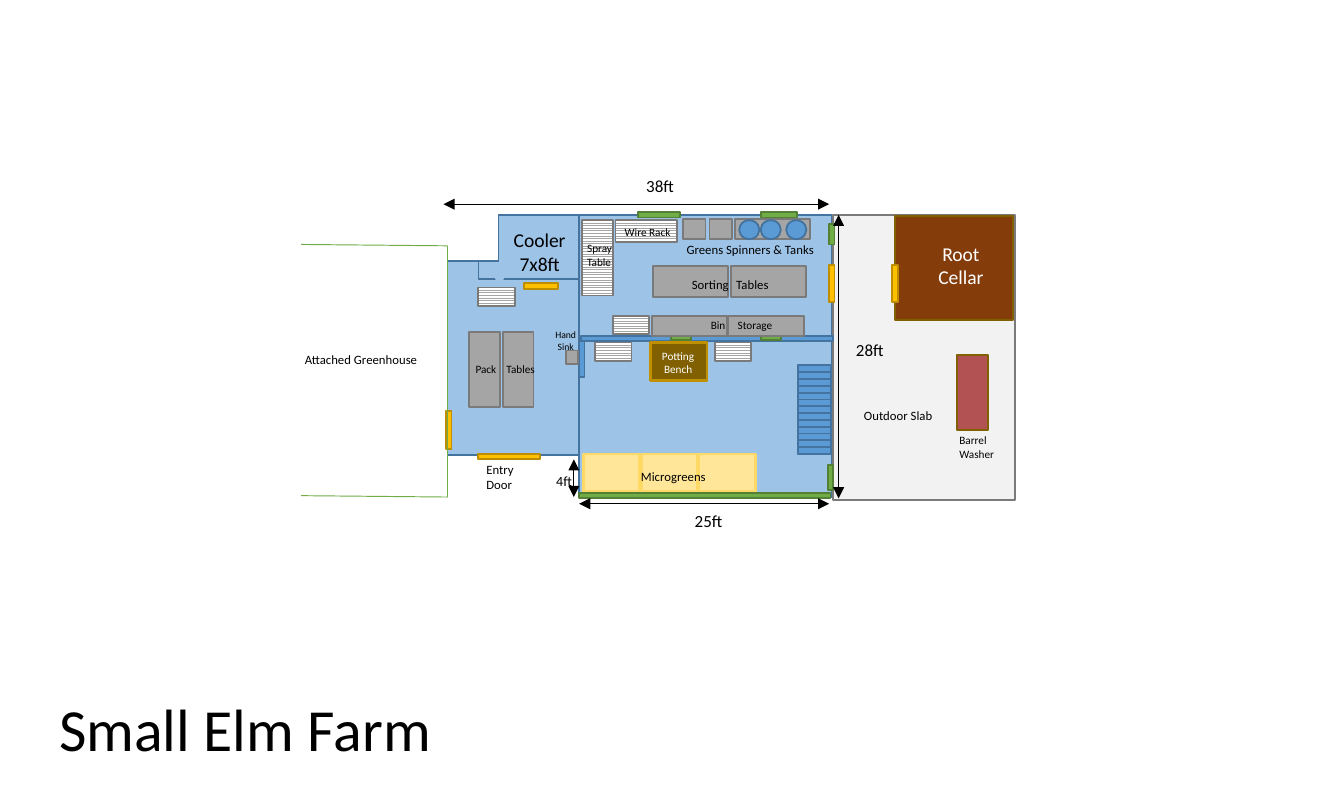
import pptx
import pptx.dml.color
import pptx.enum.dml
import pptx.enum.shapes
import pptx.enum.text
import pptx.oxml
import pptx.util

RGB = pptx.dml.color.RGBColor
BLACK, WHITE = RGB(0, 0, 0), RGB(255, 255, 255)
FLOOR, BLUE, NAVY = RGB(0x9D, 0xC3, 0xE6), RGB(0x5B, 0x9B, 0xD5), RGB(0x43, 0x73, 0x9E)
GREEN, PINE = RGB(0x70, 0xAD, 0x47), RGB(0x53, 0x80, 0x35)
AMBER, OCHRE = RGB(0xFF, 0xC0, 0x00), RGB(0xBD, 0x8E, 0x00)
PALE, GREY, SLATE = RGB(0xF2, 0xF2, 0xF2), RGB(0xA5, 0xA5, 0xA5), RGB(0x7A, 0x7A, 0x7A)
CREAM, STRAW = RGB(0xFF, 0xE6, 0x99), RGB(0xFF, 0xD9, 0x66)
RUST, RED = RGB(0x84, 0x3C, 0x0B), RGB(0xB2, 0x52, 0x52)
OLIVE, GOLD = RGB(0x80, 0x60, 0x00), RGB(0xBF, 0x90, 0x00)

# The page is a grid of 1000 columns by 600 rows
COLUMNS, ROWS = 1000, 600
CELL = pptx.util.Inches(0.01)
FONT = "Calibri"
TITLE = ("Small Elm Farm", (34, 510, 298, 64), 32)

# Look of each part: fill, line, line width
STYLES = {
    "floor": (FLOOR, NAVY, 1),
    "slab": (PALE, SLATE, 1),
    "wall": (BLUE, NAVY, 1),
    "opening": (FLOOR, FLOOR, 1),
    "window": (GREEN, PINE, 1),
    "door": (AMBER, OCHRE, 1),
    "table": (GREY, SLATE, 1),
    "rack": (None, SLATE, 1),
    "tray": (CREAM, STRAW, 1.5),
    "cellar": (RUST, OLIVE, 1),
    "washer": (RED, OLIVE, 1),
    "bench": (OLIVE, GOLD, 1.5),
    "tank": (BLUE, NAVY, 1),
}

# Parts from back to front: left, top, width, height
PARTS = [
    ("floor", [(431, 160, 188, 210), (333, 194, 98, 145), (371, 160, 60, 48), (356, 194, 15, 14)]),
    ("slab", [(620, 160, 135, 212)]),
    ("wall", [(432, 250, 188, 4), (431, 254, 4, 27)]),
    ("window", [(475, 158, 31, 4), (566, 158, 27, 4), (617, 167, 4, 15),
                (616, 346, 4, 19), (566, 249, 15, 4), (499, 249, 15, 4)]),
    ("cellar", [(666, 161, 88, 77)]),
    ("door", [(617, 197, 4, 28), (356, 338, 46, 4), (332, 306, 4, 28),
              (390, 211, 25, 4), (664, 197, 4, 28)]),
    ("table", [(421, 261, 9, 10), (486, 198, 56, 23), (544, 198, 56, 23),
               (508, 163, 17, 15), (528, 163, 17, 15), (547, 163, 56, 15),
               (485, 235, 56, 15), (542, 235, 56, 15),
               (349, 247, 23, 56), (374, 247, 23, 56)]),
    ("tank", [(left, 164, 15, 14) for left in (550, 566, 585)]),
    ("rack", [(433, 164, 23, 56), (458, 164, 46, 16), (532, 255, 27, 14),
              (356, 214, 27, 14), (443, 255, 27, 14), (456, 235, 27, 14)]),
    ("tray", [(434 + 43 * place, 338, 42, 28) for place in range(3)]),
    ("washer", [(712, 264, 23, 56)]),
    ("window", [(431, 367, 187, 4)]),
    ("bench", [(484, 255, 42, 28)]),
    ("opening", [(369, 196, 5, 12)]),
]
STAIRS, STEPS = (594, 272, 24, 66), 13

# Lines: start column and row, end column and row
GREENHOUSE = [(333, 370, 224, 369), (333, 183, 224, 182), (333, 370, 333, 183)]
DIMENSIONS = [(431, 375, 617, 375), (330, 152, 617, 152), (624, 371, 624, 160), (427, 342, 427, 370)]

# Labels: text, box, size, colour, centred, tab stop in columns
LABELS = [
    ("25ft", (507, 375, 41, 25), 9.1, BLACK, False, None),
    ("38ft", (471, 126, 41, 25), 9.1, BLACK, False, None),
    ("28ft", (627, 248, 41, 25), 9.1, BLACK, False, None),
    ("4ft", (404, 347, 32, 23), 7.5, BLACK, False, None),
    ("Sorting\tTables", (505, 201, 90, 21), 6.8, BLACK, False, 33),
    ("Microgreens", (467, 344, 68, 21), 6.8, BLACK, False, None),
    ("Greens Spinners & Tanks", (501, 175, 115, 21), 6.8, BLACK, False, None),
    ("Attached Greenhouse", (217, 257, 104, 21), 6.8, BLACK, False, None),
    ("Spray\nTable", (427, 175, 39, 30), 6, BLACK, False, None),
    ("Bin\tStorage", (519, 232, 78, 20), 6, BLACK, False, 20),
    ("Outdoor Slab", (633, 299, 71, 21), 6.8, BLACK, False, None),
    ("Barrel\nWasher", (704, 318, 47, 30), 6, BLACK, False, None),
    ("Wire Rack", (455, 163, 55, 20), 6, BLACK, False, None),
    ("Entry Door", (352, 339, 61, 21), 6.8, BLACK, False, None),
    ("Cooler\n7x8ft", (372, 165, 59, 45), 10.5, BLACK, True, None),
    ("Pack\tTables", (344, 265, 78, 20), 6, BLACK, False, 23),
    ("Potting\nBench", (482, 255, 45, 30), 6, WHITE, True, None),
    ("Hand\nSink", (403, 240, 36, 28), 5.2, BLACK, True, None),
    ("Root\nCellar", (688, 175, 54, 45), 10.5, WHITE, True, None),
]


def cells(numbers):
    return [round(number * CELL) for number in numbers]


def apply(target, formats):
    for name, value in formats.items():
        setattr(target, name, value)


def add_part(page, style, place):
    fill, line, width = STYLES[style]
    kinds = pptx.enum.shapes.MSO_SHAPE
    kind = kinds.OVAL if style == "tank" else kinds.RECTANGLE
    shape = page.shapes.add_shape(kind, *cells(place))
    shape.shadow.inherit = False
    if fill is None:
        shape.fill.patterned()
        shape.fill.pattern = pptx.enum.dml.MSO_PATTERN.NARROW_HORIZONTAL
        shape.fill.fore_color.rgb = GREY
        shape.fill.back_color.rgb = WHITE
    else:
        shape.fill.solid()
        shape.fill.fore_color.rgb = fill
    shape.line.color.rgb = line
    shape.line.width = pptx.util.Pt(width)


def add_line(page, ends, color, arrows):
    straight = pptx.enum.shapes.MSO_CONNECTOR.STRAIGHT
    line = page.shapes.add_connector(straight, *cells(ends))
    line.line.color.rgb = color
    line.line.width = pptx.util.Pt(0.5)
    properties = line._element.spPr
    pptx.oxml.xmlchemy.OxmlElement  # noqa: B018
    if arrows:
        for tag in ("a:headEnd", "a:tailEnd"):
            end = pptx.oxml.xmlchemy.OxmlElement(tag)
            end.set("type", "triangle")
            line.line._get_or_add_ln().append(end)
    properties.append(pptx.oxml.xmlchemy.OxmlElement("a:effectLst"))


def write(box, text, size, color, centred, tab):
    options = pptx.enum.text
    frame = box.text_frame
    frame.text = text
    apply(frame, {
        "word_wrap": tab is not None,
        "auto_size": options.MSO_AUTO_SIZE.SHAPE_TO_FIT_TEXT,
        "vertical_anchor": options.MSO_ANCHOR.TOP,
    })
    align = options.PP_ALIGN.CENTER if centred else options.PP_ALIGN.LEFT
    for para in frame.paragraphs:
        para.alignment = align
        if tab is not None:
            stops = pptx.oxml.xmlchemy.OxmlElement("a:tabLst")
            stop = pptx.oxml.xmlchemy.OxmlElement("a:tab")
            stop.set("pos", str(tab * CELL))
            stop.set("algn", "l")
            stops.append(stop)
            para._p.get_or_add_pPr().append(stops)
        for span in para.runs:
            apply(span.font, {"name": FONT, "size": pptx.util.Pt(size)})
            span.font.color.rgb = color


def main():
    deck = pptx.Presentation()
    apply(deck, {"slide_width": COLUMNS * CELL, "slide_height": ROWS * CELL})
    page = deck.slides.add_slide(deck.slide_layouts[5])

    # Title
    text, place, size = TITLE
    title = page.shapes.title
    apply(title, dict(zip(("left", "top", "width", "height"), cells(place))))
    write(title, text, size, BLACK, False, None)

    # Building and furniture
    for style, places in PARTS:
        for place in places:
            add_part(page, style, place)

    # Stairs: the bottom of the flight, then equal treads
    left, top, width, height = STAIRS
    tread = height / STEPS
    add_part(page, "wall", STAIRS)
    for step in range(1, STEPS):
        add_part(page, "wall", (left, top + step * tread, width, tread))

    # Greenhouse outline and dimension arrows
    for ends in GREENHOUSE:
        add_line(page, ends, GREEN, False)
    for ends in DIMENSIONS:
        add_line(page, ends, BLACK, True)

    # Labels
    for text, place, *formats in LABELS:
        write(page.shapes.add_textbox(*cells(place)), text, *formats)

    deck.save("out.pptx")


if __name__ == "__main__":
    main()
